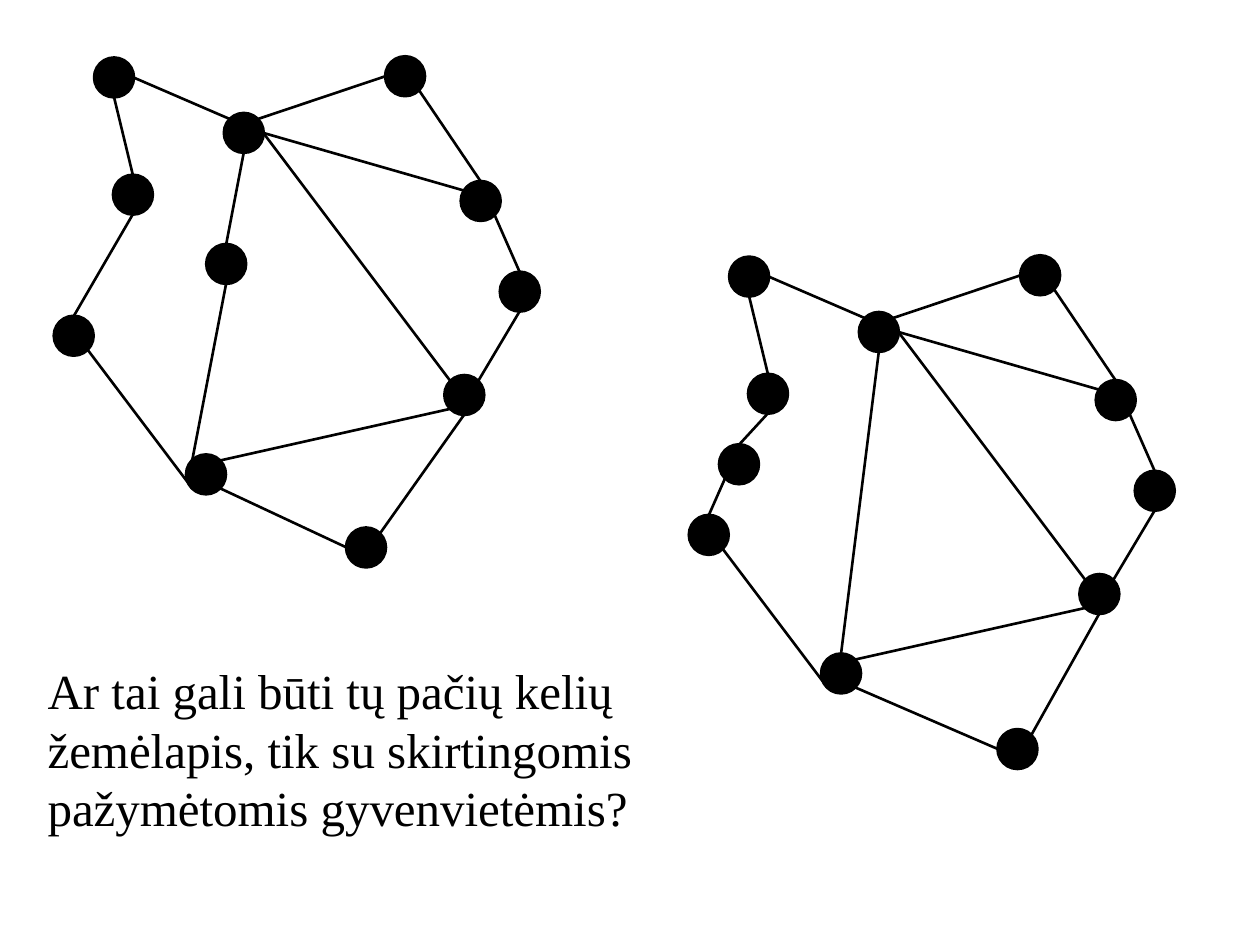
from math import cos, radians, sin

from lxml import etree
from pptx import Presentation
from pptx.dml.color import RGBColor
from pptx.enum.shapes import MSO_CONNECTOR, MSO_SHAPE
from pptx.enum.text import MSO_AUTO_SIZE
from pptx.oxml.ns import qn
from pptx.util import Inches, Pt

STRAIGHT = MSO_CONNECTOR.STRAIGHT
OVAL = MSO_SHAPE.OVAL
FIT_SHAPE = MSO_AUTO_SIZE.SHAPE_TO_FIT_TEXT

COLORS = {"ink": "000000"}
FONT = "Times New Roman"
DIAMETER = 0.31
ANGLES = {"e": 0, "se": 45, "s": 90, "sw": 135, "w": 180, "nw": 225, "n": 270, "ne": 315}
QUESTION = ("Ar tai gali būti tų pačių kelių žemėlapis, "
            "tik su skirtingomis pažymėtomis gyvenvietėmis?")

SHARED_TOWNS = {
    "northwest": (0.75, 0.46),
    "upper west": (0.9, 1.39),
    "west": (0.43, 2.51),
    "southwest": (1.48, 3.61),
    "southeast": (3.53, 2.98),
    "far east": (3.97, 2.16),
    "east": (3.66, 1.44),
    "northeast": (3.06, 0.45),
    "hub": (1.78, 0.9),
}
SHARED_ROADS = [
    ("east", "e", "hub", "e"),
    ("south", "ne", "southeast", "s"),
    ("south", "w", "southwest", "se"),
    ("far east", "s", "southeast", "ne"),
    ("southwest", "sw", "west", "se"),
    ("southeast", "sw", "southwest", "ne"),
    ("east", "n", "northeast", "se"),
    ("northeast", "w", "hub", "ne"),
    ("east", "se", "far east", "n"),
    ("southeast", "nw", "hub", "e"),
    ("upper west", "n", "northwest", "s"),
    ("hub", "nw", "northwest", "e"),
]
MAPS = [
    {
        "offset": (0, 0),
        "towns": {"south": (2.75, 4.19), "inner": (1.64, 1.94)},
        "roads": [
            ("hub", "s", "inner", "n"),
            ("southwest", "nw", "inner", "s"),
            ("west", "n", "upper west", "s"),
        ],
    },
    {
        "offset": (5.04, 1.58),
        "towns": {"south": (2.88, 4.21), "middle west": (0.67, 1.95)},
        "roads": [
            ("hub", "s", "southwest", "n"),
            ("upper west", "s", "middle west", "n"),
            ("west", "n", "middle west", "sw"),
        ],
    },
]


def ink():
    return RGBColor.from_string(COLORS["ink"])


def rim_point(corner, side):
    radius = DIAMETER / 2
    angle = radians(ANGLES[side])
    x, y = corner
    return (Inches(x + radius + radius * cos(angle)),
            Inches(y + radius + radius * sin(angle)))


def add_road(shapes, start, end):
    road = shapes.add_connector(STRAIGHT, *start, *end)
    road.line.color.rgb = ink()
    road.line.width = Pt(1.5)
    etree.SubElement(road._element.spPr, qn("a:effectLst"))


def add_town(shapes, corner):
    x, y = corner
    town = shapes.add_shape(OVAL, Inches(x), Inches(y), Inches(DIAMETER), Inches(DIAMETER))
    town.shadow.inherit = False
    town.fill.solid()
    town.fill.fore_color.rgb = ink()
    town.line.color.rgb = ink()
    town.line.width = Pt(2)


def add_map(slide, offset, towns, roads):
    shapes = slide.shapes.add_group_shape().shapes
    dx, dy = offset
    corners = {name: (x + dx, y + dy) for name, (x, y) in (SHARED_TOWNS | towns).items()}
    for origin, origin_side, target, target_side in SHARED_ROADS + roads:
        add_road(shapes, rim_point(corners[origin], origin_side),
                 rim_point(corners[target], target_side))
    for corner in corners.values():
        add_town(shapes, corner)


def add_question(slide):
    question = slide.shapes.add_textbox(Inches(0.28), Inches(5.19), Inches(5.2), Inches(1.51))
    frame = question.text_frame
    frame.word_wrap = True
    frame.auto_size = FIT_SHAPE
    paragraph = frame.paragraphs[0]
    paragraph.text = QUESTION
    paragraph.font.name = FONT
    paragraph.font.size = Pt(28)
    paragraph.font.color.rgb = ink()


def main():
    deck = Presentation()
    deck.slide_width = Inches(10)
    deck.slide_height = Inches(7.5)
    slide = deck.slides.add_slide(deck.slide_layouts[6])
    for road_map in MAPS:
        add_map(slide, **road_map)
    add_question(slide)
    deck.save("out.pptx")


if __name__ == "__main__":
    main()
